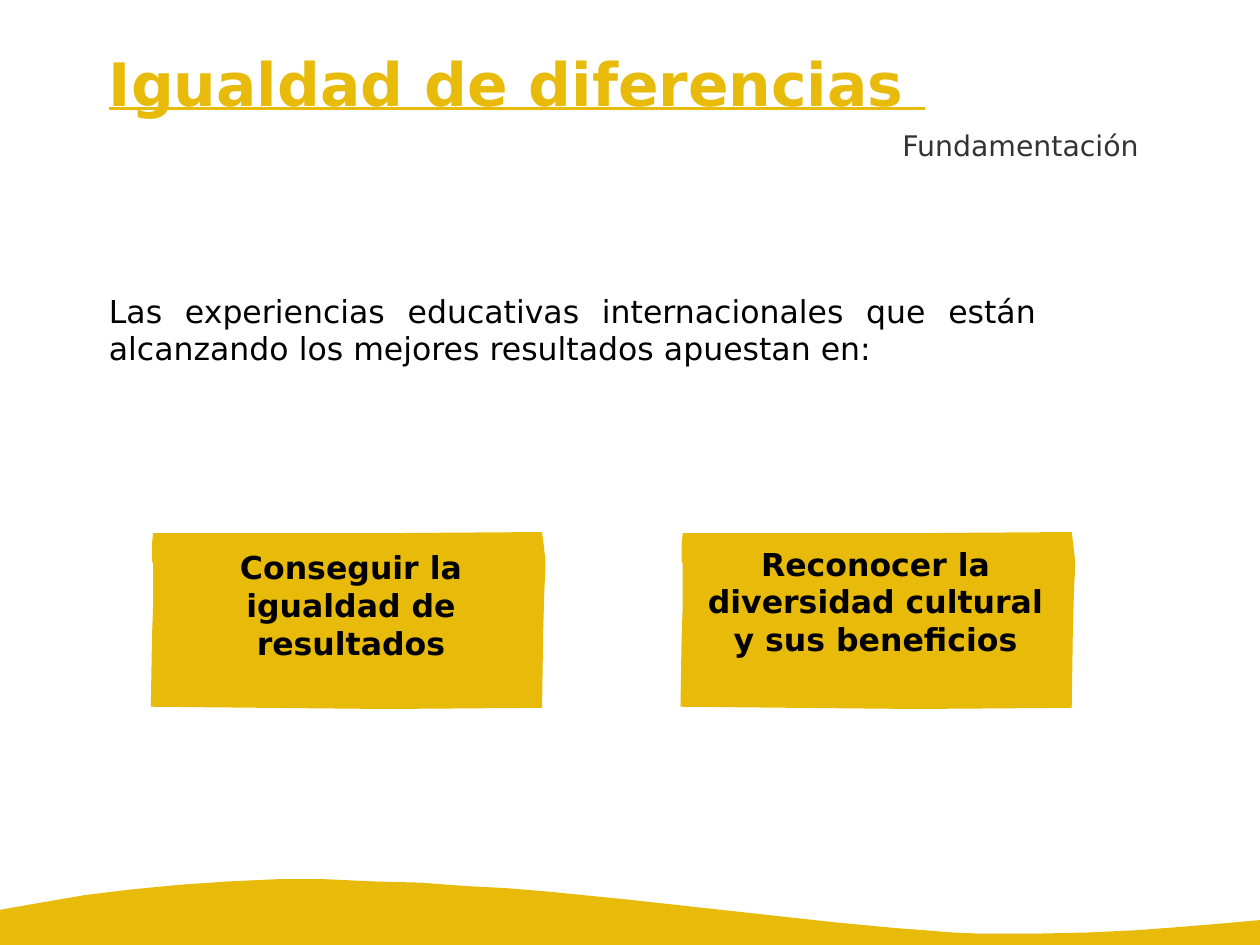
from pptx import Presentation, util as u
from pptx.dml.color import RGBColor
from pptx.enum import text

GOLD = RGBColor(0xE8, 0xBA, 0x0A)
BLACK = RGBColor(0, 0, 0)
GREY = RGBColor(0x33, 0x33, 0x33)
ALIGN = text.PP_ALIGN

FLAG = [(2, 1), (1, 11), (1, 25), (2, 28), (2, 65), (1, 94), (0, 154),
        (207, 156), (345, 155), (346, 86), (347, 52), (348, 30), (348, 26),
        (347, 16), (345, 0), (203, 1)]
WAVE = [(244, 775), (201, 777), (158, 780), (116, 784), (75, 789), (34, 796),
        (0, 802), (0, 833), (1111, 833), (1111, 811), (1078, 814),
        (1042, 817), (1002, 820), (959, 822), (913, 823), (865, 823),
        (840, 822), (815, 820), (789, 818), (736, 813), (554, 793),
        (484, 786), (448, 783), (410, 781), (370, 778), (330, 777), (287, 775)]


class Deck:
    def __init__(self):
        self.file = Presentation()
        self.file.slide_width = u.Inches(11.11)
        self.file.slide_height = u.Inches(8.33)
        self.slide = self.file.slides.add_slide(self.file.slide_layouts[5])
        self.font = {"name": "DejaVu Sans", "size": u.Pt(20), "bold": False}

    def shape(self, points, left=0, top=0):
        pen = self.slide.shapes.build_freeform(*points[0], scale=u.Inches(0.01))
        pen.add_line_segments(points[1:])
        form = pen.convert_to_shape(u.Inches(left), u.Inches(top))
        form.shadow.inherit = False
        form.fill.solid()
        form.fill.fore_color.rgb = GOLD
        form.line.fill.background()

    def fill(self, box, words, align, color=BLACK, inset=(0, 0), **style):
        frame = box.text_frame
        side, edge = map(u.Inches, inset)
        layout = {"word_wrap": True, "auto_size": text.MSO_AUTO_SIZE.NONE,
                  "vertical_anchor": text.MSO_ANCHOR.TOP,
                  "margin_left": side, "margin_right": side,
                  "margin_top": edge, "margin_bottom": edge}
        for key, value in layout.items():
            setattr(frame, key, value)
        frame.text = words
        para = frame.paragraphs[0]
        para.alignment = align
        font = para.runs[0].font
        for key, value in {**self.font, **style}.items():
            setattr(font, key, value)
        font.color.rgb = color
        return para

    def label(self, area, words, align, **style):
        box = self.slide.shapes.add_textbox(*map(u.Inches, area))
        self.fill(box, words, align, **style)

    def title(self, area, words):
        box = self.slide.shapes.title
        for key, value in zip(("left", "top", "width", "height"), area):
            setattr(box, key, u.Inches(value))
        para = self.fill(box, words, ALIGN.LEFT, GOLD, size=u.Pt(38),
                         bold=True, underline=True)
        para.line_spacing = u.Pt(44.1)


def main():
    deck = Deck()
    deck.title((0.96, 0.43, 9.6, 1.4), "Igualdad de diferencias ")
    deck.label((6.31, 1.08, 3.83, 0.4), "Fundamentación", ALIGN.RIGHT,
               color=GREY, inset=(0.1, 0.05), size=u.Pt(18))
    deck.label((0.96, 2.57, 8.18, 1.01),
               "Las experiencias educativas internacionales que están "
               "alcanzando los mejores resultados apuestan en:", ALIGN.JUSTIFY)
    goals = [
        (1.33, (1.47, 4.83, 3.25, 1.17), "Conseguir la igualdad de resultados"),
        (6, (6.21, 4.8, 3.02, 1.17),
         "Reconocer la diversidad cultural y sus beneficios"),
    ]
    for left, area, words in goals:
        deck.shape(FLAG, left, 4.69)
        deck.label(area, words, ALIGN.CENTER, bold=True)
    deck.shape(WAVE)
    deck.file.save("out.pptx")


if __name__ == "__main__":
    main()
